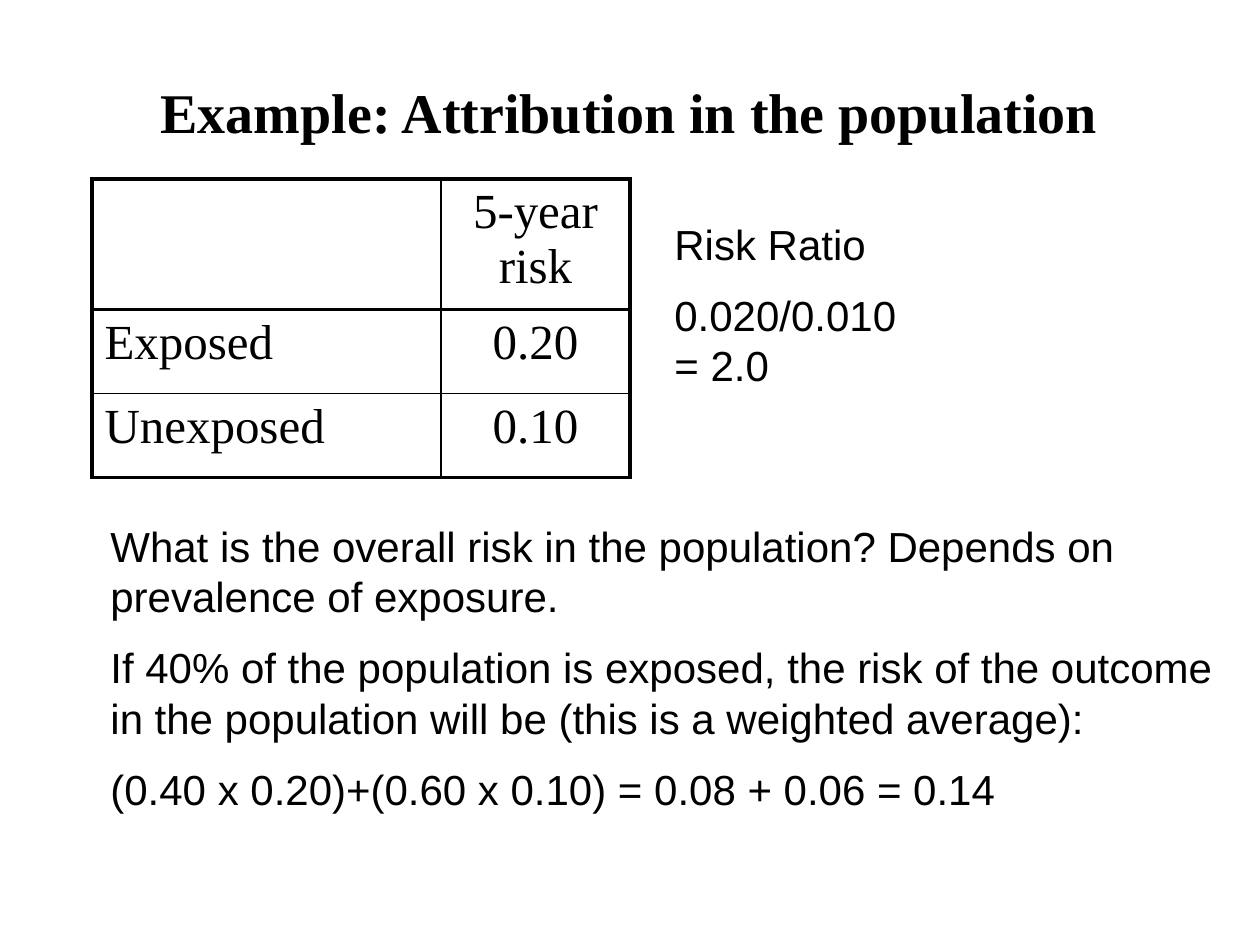
from dataclasses import dataclass

from lxml import etree
from pptx import Presentation
from pptx.dml.color import RGBColor
from pptx.enum.text import MSO_ANCHOR, PP_ALIGN
from pptx.oxml.ns import qn
from pptx.util import Emu, Pt

LEFT, CENTER = PP_ALIGN.LEFT, PP_ALIGN.CENTER
MIDDLE = MSO_ANCHOR.MIDDLE
EMU_PER_PX = 914400 / 126
BLACK = "000000"
THICK, THIN = 2.25, 1

TITLE_FONT = {"name": "Times New Roman", "size": Pt(32), "bold": True}
CELL_FONT = {"name": "Times New Roman", "size": Pt(28), "bold": False}
BODY_FONT = {"name": "Arial", "size": Pt(24), "bold": False}


@dataclass
class Box:
    x: int
    y: int
    w: int
    h: int

    def emu(self) -> list[Emu]:
        return [px(v) for v in (self.x, self.y, self.w, self.h)]


@dataclass
class Note:
    box: Box
    paragraphs: list[str]


TITLE_BOX = Box(94, 32, 1071, 158)
TABLE_BOX = Box(92, 179, 538, 298)
COL_WIDTHS = [349, 189]
ROW_HEIGHTS = [130, 84, 84]
ROWS = [["", "5-year risk"], ["Exposed", "0.20"], ["Unexposed", "0.10"]]
NOTES = [
    Note(Box(662, 212, 283, 190), ["Risk Ratio", "0.020/0.010\v= 2.0"]),
    Note(Box(98, 514, 1142, 318), [
        "What is the overall risk in the population? Depends on prevalence of exposure.",
        "If 40% of the population is exposed, the risk of the outcome in the population "
        "will be (this is a weighted average):",
        "(0.40 x 0.20)+(0.60 x 0.10) = 0.08 + 0.06 = 0.14",
    ]),
]


def px(value: int) -> Emu:
    return Emu(round(value * EMU_PER_PX))


def color(hex_value: str) -> RGBColor:
    return RGBColor.from_string(hex_value)


def write(p, text: str, font: dict, align, before_pct: int = 0) -> None:
    """Fill a paragraph; space before is a percentage of the text size."""
    p.text = text
    p.alignment = align
    if before_pct:
        before = etree.SubElement(p._p.get_or_add_pPr(), qn("a:spcBef"))
        etree.SubElement(before, qn("a:spcPct"), val=str(before_pct * 1000))
    for r in p.runs:
        for key, value in font.items():
            setattr(r.font, key, value)
        r.font.color.rgb = color(BLACK)


def add_note(s, note: Note) -> None:
    tf = s.shapes.add_textbox(*note.box.emu()).text_frame
    tf.word_wrap = True
    for i, text in enumerate(note.paragraphs):
        p = tf.add_paragraph() if i else tf.paragraphs[0]
        write(p, text, BODY_FONT, LEFT, before_pct=50)


def set_borders(cell, widths: dict[str, float]) -> None:
    tc_pr = cell._tc.get_or_add_tcPr()
    for side, width in widths.items():
        ln = etree.SubElement(tc_pr, qn(f"a:ln{side}"), w=str(int(Pt(width))))
        fill = etree.SubElement(ln, qn("a:solidFill"))
        etree.SubElement(fill, qn("a:srgbClr"), val=BLACK)


def add_risk_table(s) -> None:
    n_rows, n_cols = len(ROWS), len(COL_WIDTHS)
    table = s.shapes.add_table(n_rows, n_cols, *TABLE_BOX.emu()).table
    table.first_row = table.horz_banding = False
    for column, width in zip(table.columns, COL_WIDTHS):
        column.width = px(width)
    for row, height in zip(table.rows, ROW_HEIGHTS):
        row.height = px(height)

    for i, texts in enumerate(ROWS):
        for j, text in enumerate(texts):
            cell = table.cell(i, j)
            # Thick frame and header rule, thin lines inside
            set_borders(cell, {
                "L": THICK if j == 0 else THIN,
                "R": THICK if j == n_cols - 1 else THIN,
                "T": THICK if i <= 1 else THIN,
                "B": THICK if i in (0, n_rows - 1) else THIN,
            })
            cell.fill.background()
            if text:
                write(cell.text_frame.paragraphs[0], text, CELL_FONT,
                      CENTER if j else LEFT, before_pct=20)


def main() -> None:
    prs = Presentation()
    prs.slide_width, prs.slide_height = px(1260), px(945)
    s = prs.slides.add_slide(prs.slide_layouts[5])

    # Title
    title = s.shapes.title
    title.left, title.top, title.width, title.height = TITLE_BOX.emu()
    title.text_frame.vertical_anchor = MIDDLE
    write(title.text_frame.paragraphs[0], "Example: Attribution in the population",
          TITLE_FONT, CENTER)

    # Risk ratio and population risk
    for note in NOTES:
        add_note(s, note)

    # Risk by exposure
    add_risk_table(s)

    prs.save("out.pptx")


if __name__ == "__main__":
    main()
